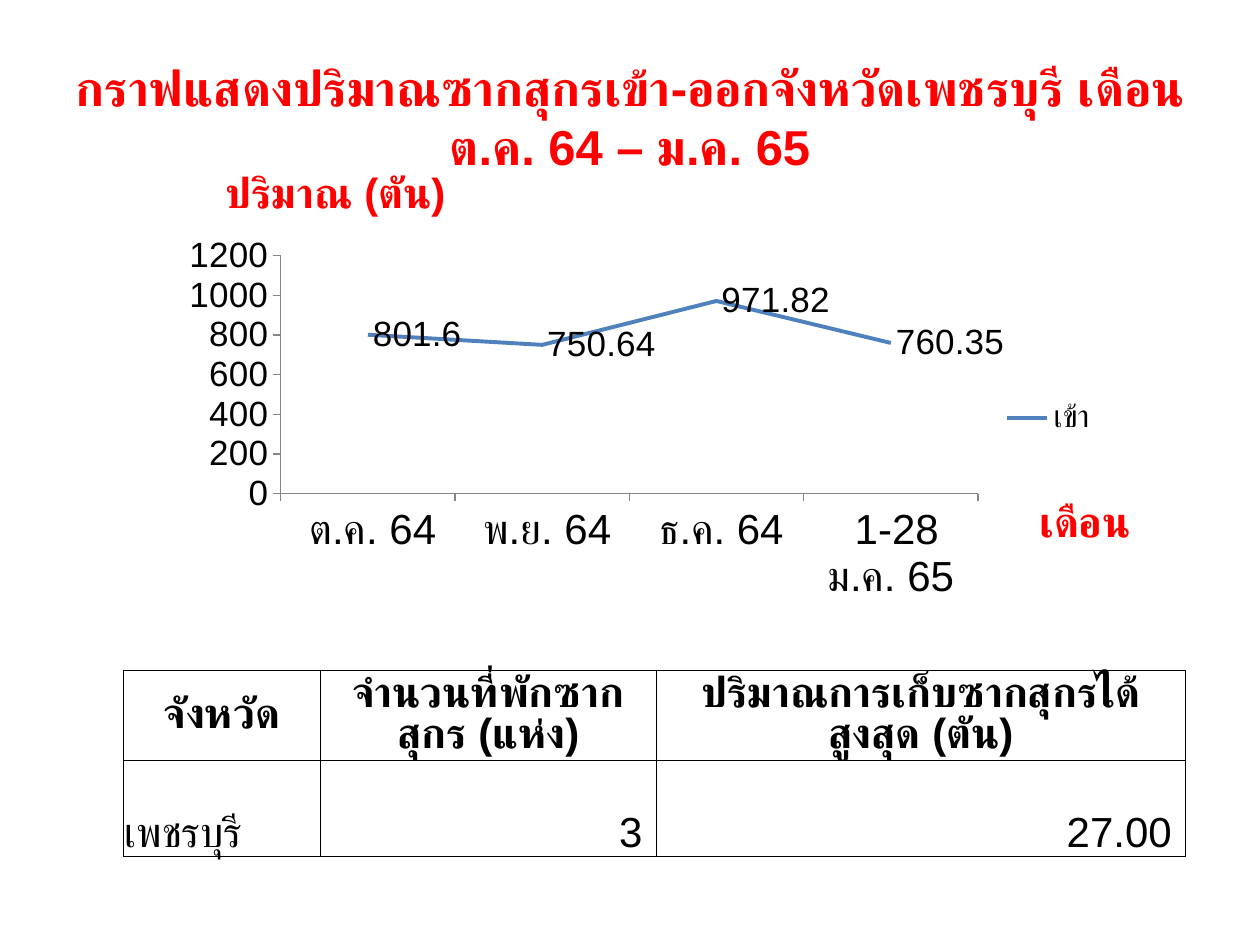
from dataclasses import dataclass

from lxml import etree
from pptx import Presentation
from pptx.chart.data import CategoryChartData
from pptx.dml.color import RGBColor
from pptx.enum.chart import (XL_CHART_TYPE, XL_LABEL_POSITION, XL_LEGEND_POSITION,
                             XL_MARKER_STYLE, XL_TICK_MARK)
from pptx.enum.text import MSO_ANCHOR, PP_ALIGN
from pptx.oxml import parse_xml
from pptx.oxml.ns import nsdecls, qn
from pptx.util import Inches, Pt

LEFT, CENTER, RIGHT = PP_ALIGN.LEFT, PP_ALIGN.CENTER, PP_ALIGN.RIGHT
MIDDLE, BOTTOM, TOP = MSO_ANCHOR.MIDDLE, MSO_ANCHOR.BOTTOM, MSO_ANCHOR.TOP
COLORS = {"red": "FF0000", "black": "000000", "line": "4F81BD", "axis": "868686"}
FONT = "Arial"


@dataclass
class Label:
    text: str
    x: float
    y: float
    w: float
    h: float
    size: int = 24
    align: PP_ALIGN = LEFT
    anchor: MSO_ANCHOR = TOP
    wrap: bool = False


@dataclass
class Cell:
    text: str
    align: PP_ALIGN = CENTER
    anchor: MSO_ANCHOR = MIDDLE
    bold: bool = True
    right: float = 0.01


LABELS = [
    Label("กราฟแสดงปริมาณซากสุกรเข้า-ออกจังหวัดเพชรบุรี เดือน ต.ค. 64 – ม.ค. 65",
          0.5, 0.3, 9, 1.25, 28, CENTER, MIDDLE, True),
    Label("ปริมาณ (ตัน)", 1.69, 1.27, 2, 0.42),
    Label("เดือน", 8.15, 3.88, 1, 0.42),
]
CATEGORIES = [" ต.ค. 64", " พ.ย. 64", " ธ.ค. 64", " 1-28 ม.ค. 65"]
SERIES_NAME, VALUES = "เข้า", [801.6, 750.64, 971.82, 760.35]
PLOT_AREA = {"x": 0.12, "y": 0.07, "w": 0.74, "h": 0.63}
COL_WIDTHS, ROW_HEIGHTS = [1.56, 2.67, 4.2], [0.71, 0.76]
ROWS = [
    [Cell("จังหวัด"), Cell("จำนวนที่พักซากสุกร (แห่ง)"),
     Cell("ปริมาณการเก็บซากสุกรได้สูงสุด (ตัน)")],
    [Cell("เพชรบุรี", LEFT, BOTTOM, False),
     Cell("3", RIGHT, BOTTOM, False, 0.11),
     Cell("27.00", RIGHT, BOTTOM, False, 0.11)],
]


def rgb(name: str) -> RGBColor:
    return RGBColor.from_string(COLORS[name])


def style_font(font, size: int, color: str = "black", bold: bool = False) -> None:
    font.name, font.size, font.bold = FONT, Pt(size), bold
    font.color.rgb = rgb(color)


def write(tf, text: str, size: int, color: str, bold: bool, align: PP_ALIGN) -> None:
    tf.text = text
    p = tf.paragraphs[0]
    p.alignment = align
    r = p.runs[0]
    style_font(r.font, size, color, bold)
    # Thai text takes its typeface from the complex-script font
    etree.SubElement(r.font._element, qn("a:cs")).set("typeface", FONT)


def add_label(s, label: Label) -> None:
    sp = s.shapes.add_textbox(*map(Inches, (label.x, label.y, label.w, label.h)))
    tf = sp.text_frame
    tf.word_wrap, tf.vertical_anchor = label.wrap, label.anchor
    write(tf, label.text, label.size, "red", True, label.align)


def add_line_chart(s) -> None:
    data = CategoryChartData()
    data.categories = CATEGORIES
    data.add_series(SERIES_NAME, VALUES)
    box = map(Inches, (1.33, 1.82, 7.48, 3))
    chart = s.shapes.add_chart(XL_CHART_TYPE.LINE, *box, data).chart
    chart.has_title = False
    chart.has_legend = True
    chart.legend.position = XL_LEGEND_POSITION.RIGHT
    chart.legend.include_in_layout = False
    style_font(chart.legend.font, 18)

    # Axes
    for axis, size in ((chart.category_axis, 24), (chart.value_axis, 20)):
        axis.has_major_gridlines = False
        axis.major_tick_mark = XL_TICK_MARK.OUTSIDE
        axis.format.line.color.rgb = rgb("axis")
        style_font(axis.tick_labels.font, size)
    value_axis = chart.value_axis
    value_axis.minimum_scale, value_axis.maximum_scale = 0, 1200
    value_axis.major_unit = 200

    # Line and its value labels
    plot = chart.plots[0]
    plot.vary_by_categories = False
    series = plot.series[0]
    series.smooth = False
    series.marker.style = XL_MARKER_STYLE.NONE
    series.format.line.color.rgb = rgb("line")
    series.format.line.width = Pt(2.25)
    labels = series.data_labels
    labels.show_value = True
    labels.position = XL_LABEL_POSITION.RIGHT
    style_font(labels.font, 20)

    # Fixed inner plot area
    plot_area = chart._chartSpace.chart.plotArea
    for old in plot_area.findall(qn("c:layout")):
        plot_area.remove(old)
    sizes = "".join(f'<c:{k} val="{v}"/>' for k, v in PLOT_AREA.items())
    plot_area.insert(0, parse_xml(
        f'<c:layout {nsdecls("c")}><c:manualLayout><c:layoutTarget val="inner"/>'
        f'<c:xMode val="edge"/><c:yMode val="edge"/>{sizes}</c:manualLayout></c:layout>'))


def add_borders(cell) -> None:
    tc_pr = cell._tc.get_or_add_tcPr()
    for i, side in enumerate(("lnL", "lnR", "lnT", "lnB")):
        tc_pr.insert(i, parse_xml(
            f'<a:{side} {nsdecls("a")} w="{Pt(0.5)}"><a:solidFill>'
            f'<a:srgbClr val="{COLORS["black"]}"/></a:solidFill></a:{side}>'))


def add_data_table(s) -> None:
    box = map(Inches, (0.98, 5.32, sum(COL_WIDTHS), sum(ROW_HEIGHTS)))
    table = s.shapes.add_table(len(ROWS), len(COL_WIDTHS), *box).table
    table.first_row = table.horz_banding = False
    for col, width in zip(table.columns, COL_WIDTHS):
        col.width = Inches(width)
    for row, height, items in zip(table.rows, ROW_HEIGHTS, ROWS):
        row.height = Inches(height)
        for cell, item in zip(row.cells, items):
            cell.fill.background()
            cell.margin_left = cell.margin_top = Inches(0.01)
            cell.margin_right, cell.margin_bottom = Inches(item.right), 0
            cell.vertical_anchor = item.anchor
            write(cell.text_frame, item.text, 24, "black", item.bold, item.align)
            cell.text_frame.paragraphs[0].line_spacing = 0.88
            add_borders(cell)


def main() -> None:
    prs = Presentation()
    prs.slide_width, prs.slide_height = Inches(10), Inches(7.5)
    s = prs.slides.add_slide(prs.slide_layouts[6])
    add_line_chart(s)
    for label in LABELS:
        add_label(s, label)
    add_data_table(s)
    prs.save("out.pptx")


if __name__ == "__main__":
    main()
